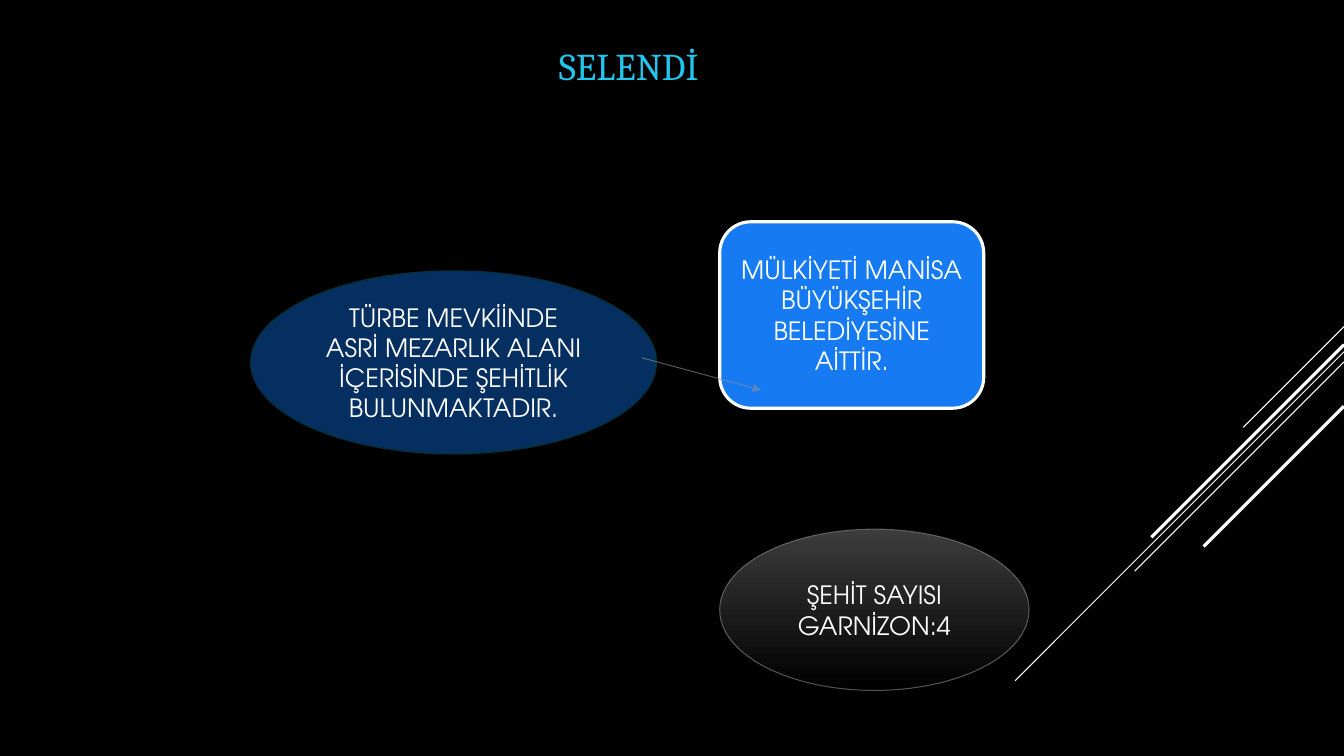
"""Build the Selendi cemetery slide."""
from dataclasses import dataclass

from lxml import etree
from pptx import Presentation
from pptx.dml.color import RGBColor
from pptx.enum.shapes import MSO_CONNECTOR, MSO_SHAPE
from pptx.enum.text import MSO_ANCHOR, MSO_AUTO_SIZE, PP_ALIGN
from pptx.oxml.ns import qn
from pptx.util import Pt

OVAL, ROUNDED = MSO_SHAPE.OVAL, MSO_SHAPE.ROUNDED_RECTANGLE
STRAIGHT = MSO_CONNECTOR.STRAIGHT
MIDDLE, BOTTOM = MSO_ANCHOR.MIDDLE, MSO_ANCHOR.BOTTOM
LEFT, CENTER = PP_ALIGN.LEFT, PP_ALIGN.CENTER
NO_FIT = MSO_AUTO_SIZE.NONE

COLORS = {
    "background": "000000", "white": "FFFFFF", "title": "22C5ED",
    "navy": "052F61", "navy_line": "043148", "blue": "167BF3",
    "charcoal": "3C3C3C", "black": "000000",
    "gray_line": "898989", "arrow": "89919C",
}
SLIDE_W, SLIDE_H = 960, 540
TITLE_BOX = {"left": Pt(192.2), "top": Pt(22.3), "width": Pt(617.8), "height": Pt(44.6)}
TITLE_FRAME = {"margin_left": Pt(207), "vertical_anchor": BOTTOM,
               "auto_size": NO_FIT, "word_wrap": True}
TITLE_FONT = {"name": "Cambria", "size": Pt(27)}
BODY_FRAME = {"vertical_anchor": MIDDLE, "word_wrap": True}
BODY_FONT = {"name": "TeX Gyre Adventor", "size": Pt(18)}


@dataclass
class Ray:
    """A 45-degree line falling leftwards from the right edge."""
    top: float
    run: float
    weight: float


@dataclass
class Bubble:
    """A filled shape with centred text."""
    kind: MSO_SHAPE
    box: tuple[float, float, float, float]
    fills: tuple[str, ...]
    line: str
    weight: float
    paragraphs: tuple[str, ...]
    opacity: int = 100


RAYS = [Ray(233.3, 72, 0.75), Ray(251.3, 234.9, 0.75), Ray(258.5, 149.5, 0.75),
        Ray(246.2, 137.6, 2.25), Ray(290.2, 100.2, 2.25)]
LOCATION = Bubble(OVAL, (179.3, 193.7, 289.4, 130.3), ("navy",), "navy_line", 1.25,
                  ("TÜRBE MEVKİİNDE ASRİ MEZARLIK ALANI İÇERİSİNDE ŞEHİTLİK BULUNMAKTADIR.",))
OWNER = Bubble(ROUNDED, (514.1, 158.4, 188.6, 133.2), ("blue",), "white", 2.25,
               ("MÜLKİYETİ MANİSA BÜYÜKŞEHİR BELEDİYESİNE AİTTİR.",))
COUNT = Bubble(OVAL, (514.1, 378, 221, 115.2), ("charcoal", "black"), "gray_line", 0.75,
               ("ŞEHİT SAYISI", "GARNİZON:4"), 60)


def rgb(name: str) -> RGBColor:
    """Look up a named colour."""
    return RGBColor.from_string(COLORS[name])


def apply(target, values: dict) -> None:
    """Set attributes from a dict of format values."""
    for name, value in values.items():
        setattr(target, name, value)


def style_line(line, color: str, weight: float, opacity: int = 100) -> None:
    """Give a line its colour, weight and opacity."""
    line.color.rgb = rgb(color)
    line.width = Pt(weight)
    if opacity < 100:
        clr = line.fill._xPr.find(".//" + qn("a:srgbClr"))
        etree.SubElement(clr, qn("a:alpha"), val=str(opacity * 1000))


def write(p, text: str, font: dict, color: str, align: PP_ALIGN) -> None:
    """Fill a paragraph with one formatted run."""
    p.alignment = align
    r = p.add_run()
    r.text = text
    apply(r.font, font)
    r.font.color.rgb = rgb(color)


def add_line(s, start: tuple[float, float], end: tuple[float, float], color: str,
             weight: float, opacity: int = 100, arrow: bool = False) -> None:
    """Draw a straight line without a shadow."""
    sp = s.shapes.add_connector(STRAIGHT, *(Pt(v) for v in start + end))
    style_line(sp.line, color, weight, opacity)
    if arrow:
        etree.SubElement(sp.line._get_or_add_ln(), qn("a:tailEnd"), type="triangle")
    etree.SubElement(sp._element.spPr, qn("a:effectLst"))


def add_bubble(s, bubble: Bubble) -> None:
    """Draw a bubble with its text."""
    sp = s.shapes.add_shape(bubble.kind, *(Pt(v) for v in bubble.box))
    sp.shadow.inherit = False
    if len(bubble.fills) > 1:
        sp.fill.gradient()
        sp.fill.gradient_angle = 270
        for stop, color in zip(sp.fill.gradient_stops, bubble.fills):
            stop.color.rgb = rgb(color)
    else:
        sp.fill.solid()
        sp.fill.fore_color.rgb = rgb(bubble.fills[0])
    style_line(sp.line, bubble.line, bubble.weight, bubble.opacity)
    tf = sp.text_frame
    apply(tf, BODY_FRAME)
    for i, text in enumerate(bubble.paragraphs):
        p = tf.add_paragraph() if i else tf.paragraphs[0]
        write(p, text, BODY_FONT, "white", CENTER)


def main() -> None:
    """Build and save the slide."""
    prs = Presentation()
    prs.slide_width, prs.slide_height = Pt(SLIDE_W), Pt(SLIDE_H)
    s = prs.slides.add_slide(prs.slide_layouts[5])
    s.background.fill.solid()
    s.background.fill.fore_color.rgb = rgb("background")

    for ray in RAYS:
        add_line(s, (SLIDE_W, ray.top), (SLIDE_W - ray.run, ray.top + ray.run),
                 "white", ray.weight)

    title = s.shapes.title
    apply(title, TITLE_BOX)
    apply(title.text_frame, TITLE_FRAME)
    write(title.text_frame.paragraphs[0], "SELENDİ", TITLE_FONT, "title", LEFT)

    add_bubble(s, LOCATION)
    add_bubble(s, OWNER)
    add_line(s, (458.6, 255.6), (543.6, 278.6), "arrow", 0.75, 60, arrow=True)
    add_bubble(s, COUNT)
    prs.save("out.pptx")


if __name__ == "__main__":
    main()
